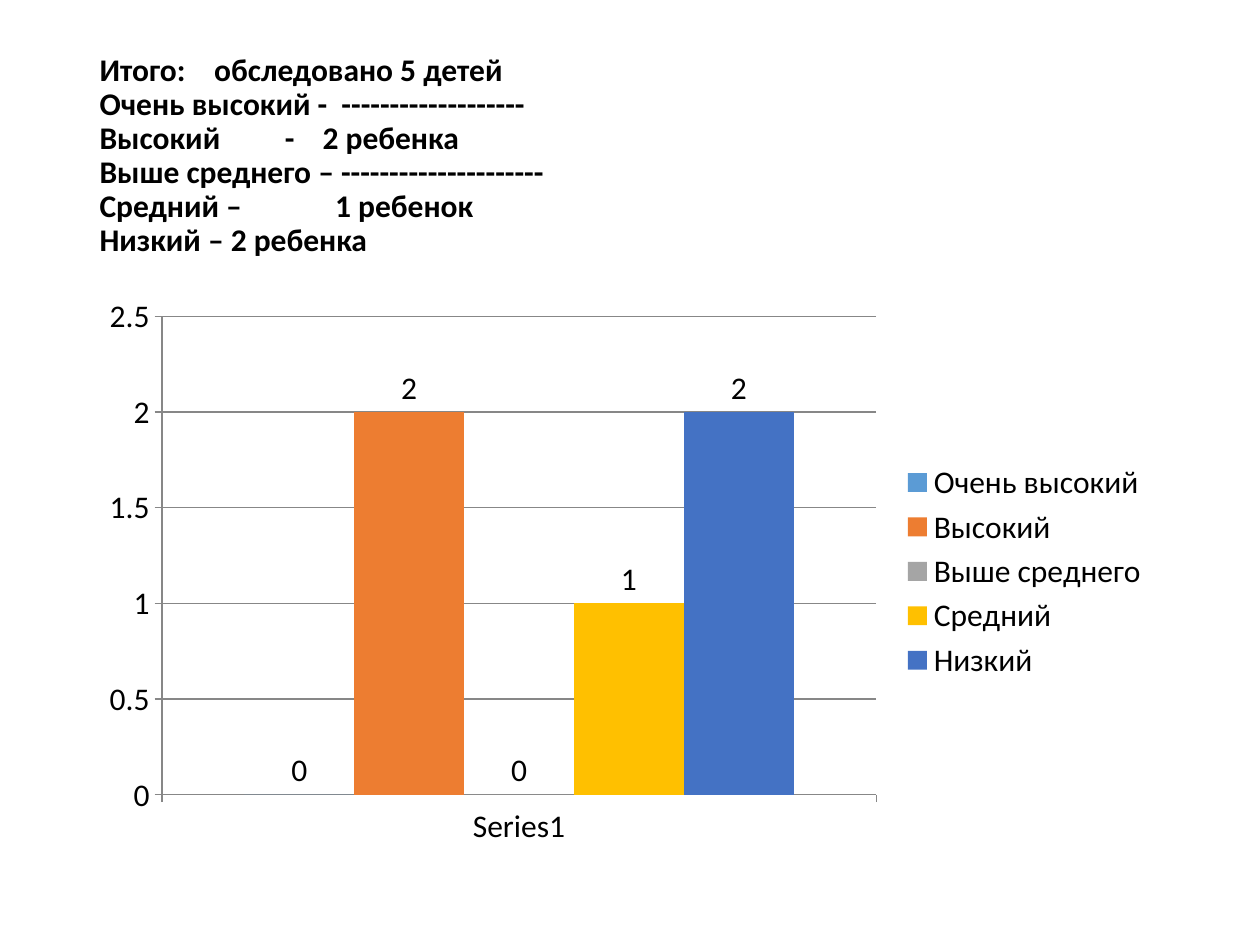
from dataclasses import dataclass

from lxml.etree import SubElement
from pptx import Presentation
from pptx.chart.data import CategoryChartData
from pptx.dml.color import RGBColor
from pptx.enum.chart import (XL_CHART_TYPE, XL_LABEL_POSITION,
                             XL_LEGEND_POSITION, XL_TICK_MARK)
from pptx.enum.text import MSO_ANCHOR, MSO_AUTO_SIZE, PP_ALIGN
from pptx.oxml.ns import qn
from pptx.util import Inches, Pt


@dataclass(frozen=True)
class Theme:
    font: str = "Calibri"
    size: int = 18
    text: str = "000000"
    line: str = "878787"


@dataclass(frozen=True)
class SummaryLine:
    text: str
    tabs: tuple[float, ...] = ()


@dataclass(frozen=True)
class Level:
    name: str
    children: int
    color: str


THEME = Theme()

SUMMARY = [
    SummaryLine("Итого:\tобследовано 5 детей", (0.91,)),
    SummaryLine("Очень высокий -\t-------------------", (1.92,)),
    SummaryLine("Высокий\t-\t2 ребенка", (1.47, 1.77)),
    SummaryLine("Выше среднего – ---------------------"),
    SummaryLine("Средний –\t1 ребенок", (1.87,)),
    SummaryLine("Низкий – 2 ребенка"),
]

LEVELS = [
    Level("Очень высокий", 0, "5B9BD5"),
    Level("Высокий", 2, "ED7D31"),
    Level("Выше среднего", 0, "A5A5A5"),
    Level("Средний", 1, "FFC000"),
    Level("Низкий", 2, "4472C4"),
]


def rgb(color: str) -> RGBColor:
    return RGBColor.from_string(color)


def set_font(font, *, bold: bool = False) -> None:
    font.name = THEME.font
    font.size = Pt(THEME.size)
    font.bold = bold
    font.color.rgb = rgb(THEME.text)


def write_line(p, text: str, *, tabs: tuple[float, ...] = (),
               bold: bool = False, spacing: float = 0.9) -> None:
    p.alignment = PP_ALIGN.LEFT
    p.line_spacing = spacing
    p.space_before = Pt(0)
    if tabs:
        tab_list = SubElement(p._p.get_or_add_pPr(), qn("a:tabLst"))
        for pos in tabs:
            SubElement(tab_list, qn("a:tab"), pos=str(Inches(pos)), algn="l")
    r = p.add_run()
    r.text = text
    set_font(r.font, bold=bold)


def add_summary(s, lines: list[SummaryLine]) -> None:
    sp = s.shapes.title
    sp.left, sp.top = Inches(0.69), Inches(0.4)
    sp.width, sp.height = Inches(8.62), Inches(1.45)
    tf = sp.text_frame
    tf.word_wrap = True
    tf.auto_size = MSO_AUTO_SIZE.NONE
    tf.vertical_anchor = MSO_ANCHOR.TOP
    tf.margin_top = Inches(0.03)
    for i, line in enumerate(lines):
        p = tf.add_paragraph() if i else tf.paragraphs[0]
        write_line(p, line.text, tabs=line.tabs, bold=True)


def add_level_chart(s, levels: list[Level]) -> None:
    data = CategoryChartData(number_format="General")
    data.categories = ["Series1"]
    for level in levels:
        data.add_series(level.name, [level.children])
    chart = s.shapes.add_chart(
        XL_CHART_TYPE.COLUMN_CLUSTERED, Inches(0.7), Inches(2.27),
        Inches(8.52), Inches(4.53), data).chart
    set_font(chart.font)
    chart.has_title = False
    chart.has_legend = True
    chart.legend.position = XL_LEGEND_POSITION.RIGHT
    chart.legend.include_in_layout = False

    # Axes and gridlines
    value_axis = chart.value_axis
    value_axis.minimum_scale, value_axis.maximum_scale = 0, 2.5
    value_axis.major_unit = 0.5
    value_axis.has_major_gridlines = True
    for axis in (chart.category_axis, value_axis):
        axis.major_tick_mark = XL_TICK_MARK.OUTSIDE
    for part in (chart.category_axis, value_axis, value_axis.major_gridlines):
        part.format.line.color.rgb = rgb(THEME.line)
        part.format.line.width = Pt(0.75)

    # Columns and their values
    plot = chart.plots[0]
    plot.gap_width = 150
    plot.overlap = 0
    plot.vary_by_categories = False
    for series, level in zip(plot.series, levels):
        series.format.fill.solid()
        series.format.fill.fore_color.rgb = rgb(level.color)
        series.invert_if_negative = False
        labels = series.data_labels
        labels.show_value = True
        labels.position = XL_LABEL_POSITION.OUTSIDE_END
        set_font(labels.font)


def main() -> None:
    prs = Presentation()
    prs.slide_width, prs.slide_height = Inches(10), Inches(7.5)
    s = prs.slides.add_slide(prs.slide_layouts[5])
    add_summary(s, SUMMARY)
    add_level_chart(s, LEVELS)
    prs.save("out.pptx")


if __name__ == "__main__":
    main()
